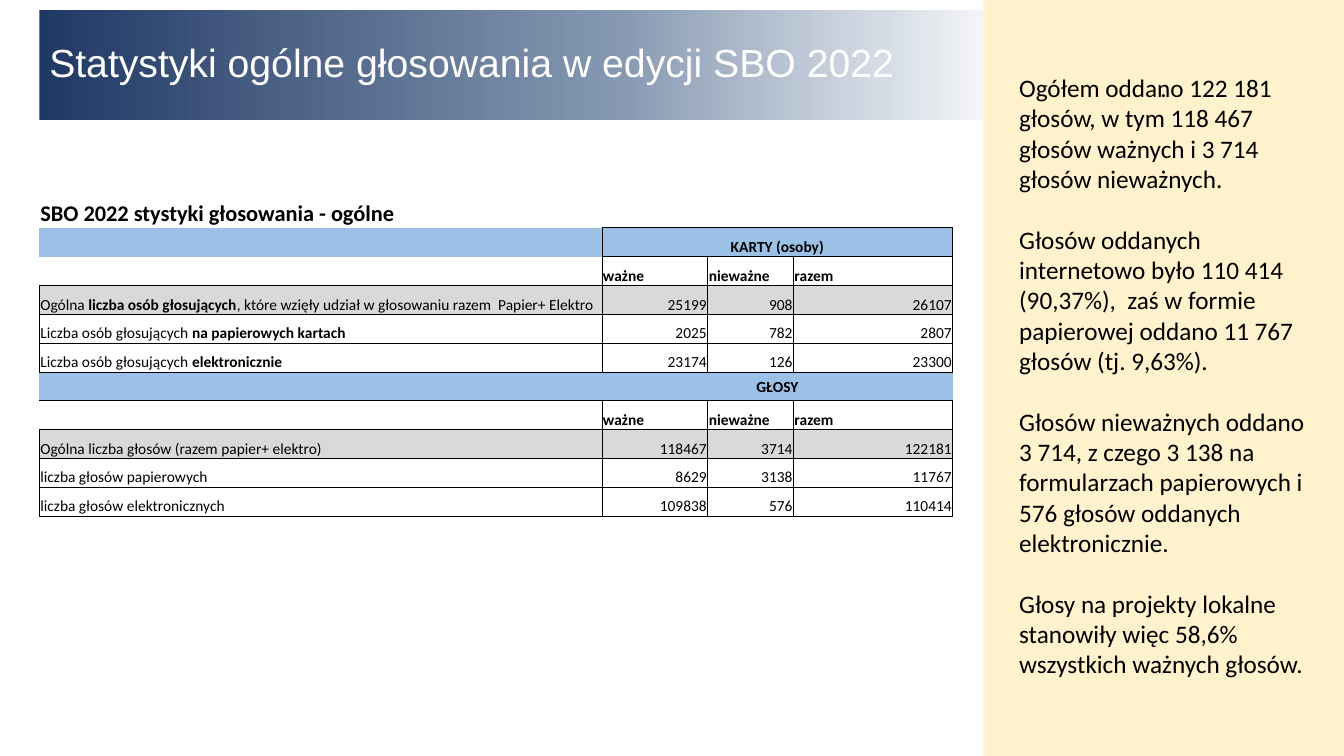
from lxml.etree import SubElement
from pptx import Presentation
from pptx.dml.color import RGBColor
from pptx.enum.shapes import MSO_SHAPE
from pptx.enum.text import MSO_ANCHOR, PP_ALIGN
from pptx.oxml.ns import qn
from pptx.util import Inches, Pt

BLACK = RGBColor(0x00, 0x00, 0x00)
WHITE = RGBColor(0xFF, 0xFF, 0xFF)
CREAM = RGBColor(0xFF, 0xF2, 0xCC)
BLUE = RGBColor(0x9B, 0xC2, 0xE6)
GREY = RGBColor(0xD9, 0xD9, 0xD9)
TITLE_GRADIENT = [
    (0, RGBColor(0x20, 0x38, 0x64)),
    (58, RGBColor(0x84, 0x97, 0xB0)),
    (86, RGBColor(0xD6, 0xDC, 0xE5)),
    (100, WHITE),
]
NO_STYLE = "{2D5ABB26-0587-4C30-8999-92F81FD0307C}"


def write(para, text, size=18, font="Calibri", color=BLACK, bold=False, align=PP_ALIGN.LEFT):
    """Fill a paragraph; parts between asterisks switch the bold setting."""
    para.alignment = align
    for index, part in enumerate(text.split("*")):
        if part:
            span = para.add_run()
            span.text = part
            span.font.size = Pt(size)
            span.font.name = font
            span.font.color.rgb = color
            span.font.bold = bold != (index % 2 == 1)
    if not text:
        para._p.get_or_add_endParaRPr().set("sz", str(size * 100))


def draw_borders(cell, sides):
    properties = cell._tc.get_or_add_tcPr()
    for side in "LRTB":
        if side in sides:
            line = SubElement(properties, qn(f"a:ln{side}"), w=str(Pt(0.5)))
            fill = SubElement(line, qn("a:solidFill"))
            SubElement(fill, qn("a:srgbClr"), val=str(BLACK))


deck = Presentation()
deck.slide_width, deck.slide_height = Inches(13.33), Inches(7.5)
page = deck.slides.add_slide(deck.slide_layouts[6])
left_margin = Inches(0.39)
panel_left = Inches(9.75)

# Title band
title = page.shapes.add_shape(
    MSO_SHAPE.RECTANGLE, left_margin, Inches(0.1), Inches(9.75), Inches(1.09))
title.shadow.inherit = False
title.line.fill.background()
title.fill.gradient()
title.fill.gradient_angle = 0
stops = title.fill._fill._gradFill.find(qn("a:gsLst"))
for stop in list(stops):
    stops.remove(stop)
for position, color in TITLE_GRADIENT:
    stop = SubElement(stops, qn("a:gs"), pos=str(position * 1000))
    SubElement(stop, qn("a:srgbClr"), val=str(color))
title.text_frame.word_wrap = True
title.text_frame.vertical_anchor = MSO_ANCHOR.MIDDLE
title_para = title.text_frame.paragraphs[0]
title_para.line_spacing = 0.9
write(title_para, "Statystyki ogólne głosowania w edycji SBO 2022",
      size=28, font="Arial", color=WHITE)

# Side panel
panel = page.shapes.add_shape(
    MSO_SHAPE.RECTANGLE, panel_left, 0, deck.slide_width - panel_left, deck.slide_height)
panel.shadow.inherit = False
panel.line.fill.background()
panel.fill.solid()
panel.fill.fore_color.rgb = CREAM
panel.text_frame.vertical_anchor = MSO_ANCHOR.TOP
panel.text_frame.margin_top = Inches(0.72)
write(panel.text_frame.paragraphs[0], ".", align=PP_ALIGN.CENTER)

# Voting table: kind of row, then its texts
rows = [
    ("caption", "SBO 2022 stystyki głosowania - ogólne", "", "", ""),
    ("cards", "", "KARTY (osoby)", "", ""),
    ("heading", "", "ważne", "nieważne", "razem"),
    ("total", "Ogólna* liczba osób głosujących*, które wzięły udział w głosowaniu razem  Papier+ Elektro",
     "25199", "908", "26107"),
    ("detail", "Liczba osób głosujących *na papierowych kartach*", "2025", "782", "2807"),
    ("detail", "Liczba osób głosujących *elektronicznie*", "23174", "126", "23300"),
    ("votes", "", "GŁOSY", "", ""),
    ("heading", "", "ważne", "nieważne", "razem"),
    ("total", "Ogólna liczba głosów (razem papier+ elektro)", "118467", "3714", "122181"),
    ("detail", "liczba głosów papierowych", "8629", "3138", "11767"),
    ("detail", "liczba głosów elektronicznych", "109838", "576", "110414"),
]
borders = {
    "caption": ("", "B", "B", "B"),
    "cards": ("R", "LRTB", "TB", "RTB"),
    "votes": ("T", "TB", "TB", "TB"),
    "heading": ("RB", "LRTB", "LRTB", "LRTB"),
    "total": ("LRTB",) * 4,
    "detail": ("LRTB",) * 4,
}
fills = {"cards": BLUE, "votes": BLUE, "total": GREY}
column_widths = [5.58, 1.05, 0.85, 1.58]
caption_height, row_height = 0.86, 0.286

frame = page.shapes.add_table(
    len(rows), len(column_widths), left_margin, Inches(1.4),
    Inches(sum(column_widths)), Inches(caption_height + row_height * (len(rows) - 1)))
table = frame.table
table.first_row = table.horz_banding = False
table._tbl.tblPr.find(qn("a:tableStyleId")).text = NO_STYLE
for column, width in zip(table.columns, column_widths):
    column.width = Inches(width)

for row_index, (kind, *texts) in enumerate(rows):
    table.rows[row_index].height = Inches(caption_height if kind == "caption" else row_height)
    for column_index, text in enumerate(texts):
        cell = table.cell(row_index, column_index)
        cell.margin_left = cell.margin_right = cell.margin_top = Inches(0.01)
        cell.margin_bottom = 0
        cell.vertical_anchor = MSO_ANCHOR.MIDDLE if kind == "votes" else MSO_ANCHOR.BOTTOM
        draw_borders(cell, borders[kind][column_index])
        if kind in fills:
            cell.fill.solid()
            cell.fill.fore_color.rgb = fills[kind]
        else:
            cell.fill.background()
        if kind in ("cards", "votes"):
            align = PP_ALIGN.CENTER
        else:
            align = PP_ALIGN.RIGHT if text.isdigit() else PP_ALIGN.LEFT
        write(cell.text_frame.paragraphs[0], text, size=16 if kind == "caption" else 11,
              bold=kind not in ("total", "detail"), align=align)
    if kind in ("cards", "votes"):
        table.cell(row_index, 1).merge(table.cell(row_index, 3))

# Commentary on the panel
comments = [
    "Ogółem oddano 122 181 głosów, w tym 118 467 głosów ważnych i 3 714 głosów nieważnych.",
    "Głosów oddanych internetowo było 110 414 (90,37%),  zaś w formie papierowej oddano 11 767 głosów (tj. 9,63%).",
    "Głosów nieważnych oddano 3 714, z czego 3 138 na formularzach papierowych i 576 głosów oddanych elektronicznie.",
    "Głosy na projekty lokalne stanowiły więc 58,6% wszystkich ważnych głosów.",
]
box = page.shapes.add_textbox(Inches(10.01), Inches(0.67), Inches(3.07), Inches(6.16))
box.text_frame.word_wrap = True
for index, comment in enumerate(comments):
    para = box.text_frame.add_paragraph() if index else box.text_frame.paragraphs[0]
    para.space_before = Pt(22 if index else 0)
    write(para, comment)

deck.save("out.pptx")
